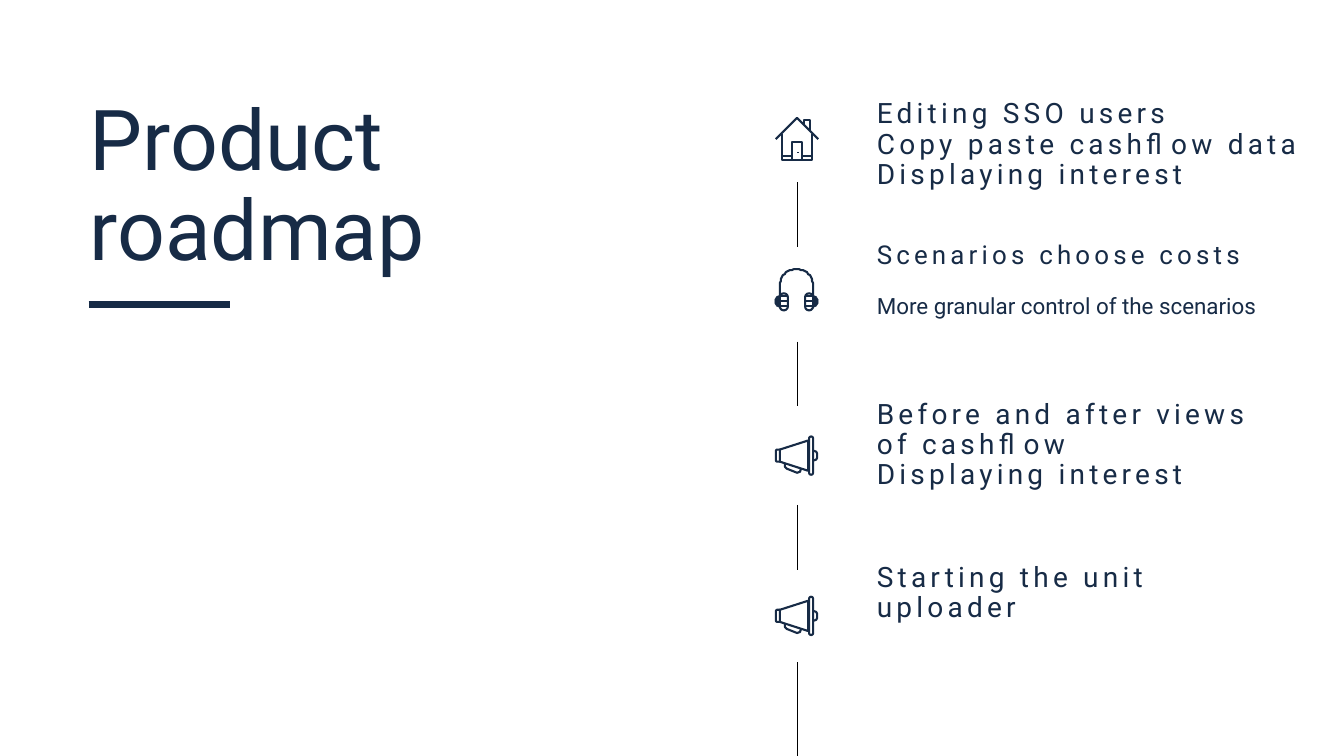
from math import cos, pi, sin
from lxml.etree import SubElement
from pptx import Presentation
from pptx.dml.color import RGBColor
from pptx.enum.shapes import MSO_CONNECTOR, MSO_SHAPE
from pptx.enum.text import MSO_ANCHOR
from pptx.oxml.ns import qn
from pptx.util import Inches, Pt

INK = {"navy": "172B46", "black": "000000", "white": "FFFFFF"}
COLS, ROWS = 80, 45
UNIT = Inches(0.01)

HOUSE = [
    [(1, 22), (22, 1), (43, 22)],
    [(7, 17), (7, 43), (37, 43), (37, 17)],
    [(17, 43), (17, 25), (27, 25), (27, 43)],
    [(29, 8), (29, 3), (35, 3), (35, 14)],
    [(7, 39), (17, 39)],
    [(27, 39), (37, 39)],
    [(23, 35), (23, 36)],
]
BAND = [(21.5 - 16.5 * cos(pi * i / 24), 17.5 - 16.5 * sin(pi * i / 24))
        for i in range(25)]
PHONES = [[(5, 27), *BAND, (38, 27)]] + [
    [(x, y), (x + 8, y)] for x in (5, 30) for y in (28, 33, 38)]
PADS = [
    [(5, 27), (2, 28), (0, 31), (0, 35), (2, 38), (5, 39)],
    [(38, 27), (41, 28), (43, 31), (43, 35), (41, 38), (38, 39)],
]
HORN = [
    [(5, 14), (33, 5), (33, 35), (5, 26), (5, 14)],
    [(5, 14), (2, 14), (1, 15), (1, 25), (2, 26), (5, 26)],
    [(38, 15), (41, 16), (42, 18), (42, 22), (41, 24), (38, 25)],
    [(10, 28), (10, 31), (12, 33), (22, 37), (25, 36), (26, 33)],
]


def tint(name):
    return RGBColor.from_string(INK[name])


class Board:
    def __init__(self, deck):
        self.wide = deck.slide_width / COLS
        self.high = deck.slide_height / ROWS
        self.page = deck.slides.add_slide(deck.slide_layouts[6])
        self.page.background.fill.solid()
        self.page.background.fill.fore_color.rgb = tint("white")
        self.shapes = self.page.shapes

    def spot(self, col, row):
        return round(col * self.wide), round(row * self.high)

    def text(self, box, words, size, lead=0.9, gap=0):
        col, row, wide, high = box
        item = self.shapes.add_textbox(
            *self.spot(col, row), *self.spot(wide, high))
        frame = item.text_frame
        style = {"word_wrap": True, "vertical_anchor": MSO_ANCHOR.TOP}
        for key, value in style.items():
            setattr(frame, key, value)
        frame.text = words
        para = frame.paragraphs[0]
        para.line_spacing = lead
        form = {"name": "Roboto", "size": Pt(size)}
        for run in para.runs:
            for key, value in form.items():
                setattr(run.font, key, value)
            run.font.color.rgb = tint("navy")
            if gap:
                run.font._element.set("spc", str(gap * 100))

    def line(self, start, end, color="black", width=0.75):
        link = self.shapes.add_connector(
            MSO_CONNECTOR.STRAIGHT, *self.spot(*start), *self.spot(*end))
        link.line.color.rgb = tint(color)
        link.line.width = Pt(width)
        SubElement(link._element.spPr, qn("a:effectLst"))

    def paint(self, shape, full=False):
        shape.shadow.inherit = False
        shape.line.color.rgb = tint("navy")
        shape.line.width = Pt(0.25 if full else 1.5)
        if full:
            shape.fill.solid()
            shape.fill.fore_color.rgb = tint("navy")
        else:
            shape.fill.background()

    def draw(self, at, paths, full=False):
        pen = self.shapes.build_freeform(*paths[0][0], scale=UNIT)
        for path in paths:
            pen.move_to(*path[0])
            pen.add_line_segments(path[1:], close=full)
        self.paint(pen.convert_to_shape(*self.spot(*at)), full)

    def pill(self, at, box):
        left, top = self.spot(*at)
        x, y, wide, high = (n * UNIT for n in box)
        item = self.shapes.add_shape(
            MSO_SHAPE.ROUNDED_RECTANGLE, left + x, top + y, wide, high)
        item.adjustments[0] = 0.5
        self.paint(item)

    def house(self, at):
        self.draw(at, HOUSE)

    def phones(self, at):
        self.draw(at, PHONES)
        self.draw(at, PADS, True)
        for x in (5, 30):
            self.pill(at, (x, 25, 8, 17))

    def horn(self, at):
        self.draw(at, HORN)
        self.pill(at, (34, 1, 4, 38))


def main():
    deck = Presentation()
    deck.slide_width, deck.slide_height = Inches(13.33), Inches(7.5)
    board = Board(deck)

    board.text((4.74, 5.52, 36.42, 12.6), "Product roadmap", 60)
    board.line((5.28, 18.12), (13.68, 18.12), "navy", 5)

    steps = [
        (5.64, 29.16, 8.34, 20, "Editing SSO users\vCopy paste cashflow data\vDisplaying interest"),
        (14.1, 24.3, 2.7, 18.5, "Scenarios choose costs"),
        (23.52, 25.86, 6.54, 20, "Before and after views of cashflow\vDisplaying interest"),
        (33.24, 25.14, 4.5, 20, "Starting the unit uploader"),
    ]
    for row, wide, high, size, words in steps:
        board.text((51.6, row, wide, high), words, size, gap=3)
    board.text((51.6, 16.8, 24.3, 2.4),
               "More granular control of the scenarios", 16, 1.2)

    for top, end in ((10.86, 14.7), (20.34, 24.18), (30.06, 33.9), (39.42, 45)):
        board.line((47.46, top), (47.46, end))

    icons = [(board.house, 6.96), (board.phones, 15.96),
             (board.horn, 25.92), (board.horn, 35.46)]
    for icon, row in icons:
        icon((46.12, row))

    deck.save("out.pptx")


if __name__ == "__main__":
    main()
